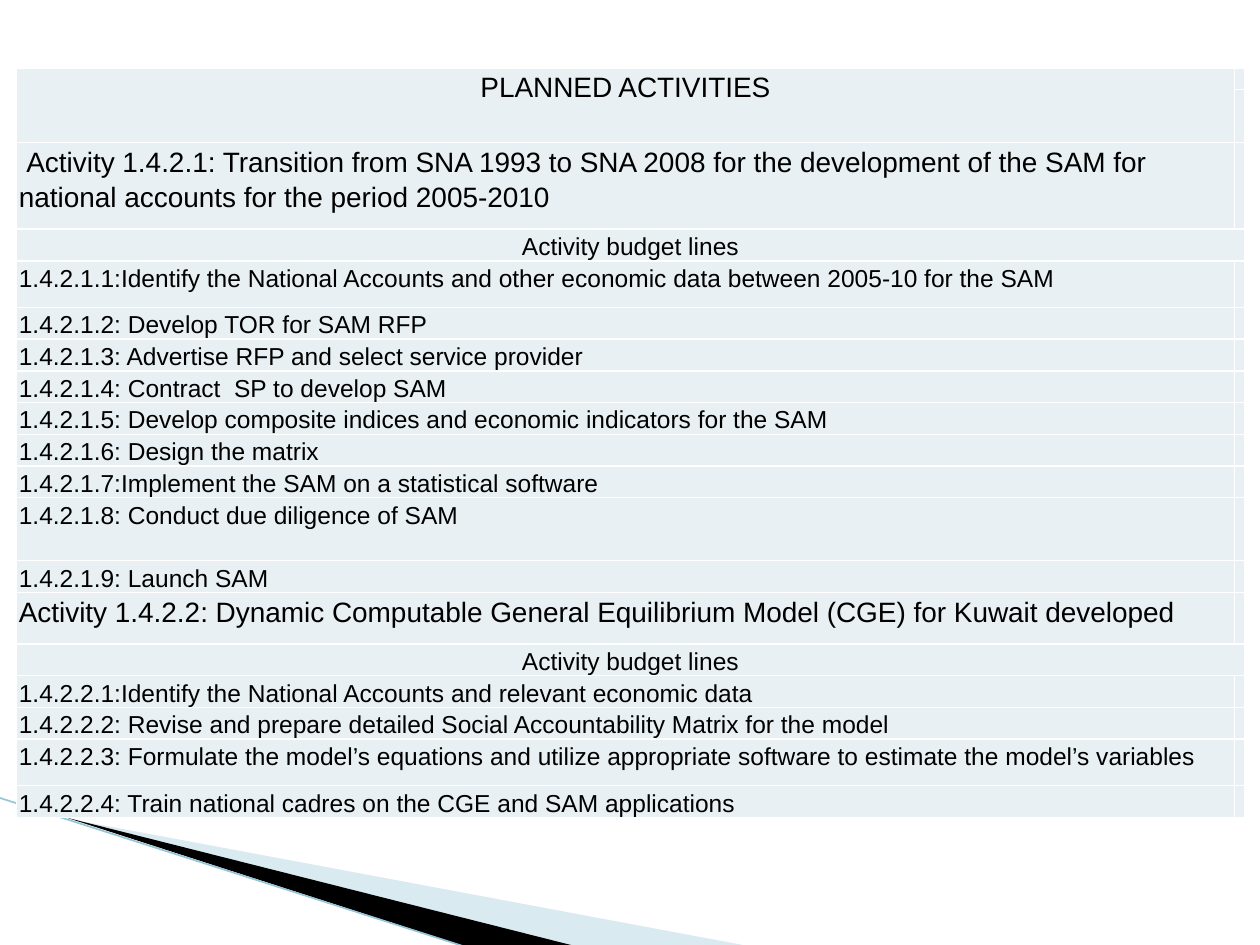
from lxml.etree import SubElement
from pptx import Presentation
from pptx.dml.color import RGBColor
from pptx.enum.shapes import MSO_CONNECTOR
from pptx.enum.text import PP_ALIGN
from pptx.oxml import parse_xml
from pptx.oxml.ns import nsdecls, qn
from pptx.util import Inches, Pt

WHITE = RGBColor(0xFF, 0xFF, 0xFF)
BLACK = RGBColor(0, 0, 0)
ROW_TINT = RGBColor(0xE8, 0xF0, 0xF4)
SWOOSH_BLUE = RGBColor(0xA0, 0xCB, 0xDC)
EDGE_BLUE = RGBColor(0x97, 0xC5, 0xD8)

FONT = "Arial"
LINE_ROW = 0.25
COLUMN_WIDTHS = (9.67, 0.07)
CELL_FORMAT = {"margin_left": Inches(0.02), "margin_right": Inches(0.02),
               "margin_top": 0, "margin_bottom": 0}

# kind of row: size in points, alignment, space after in points
ROW_KINDS = {
    "title": (16, PP_ALIGN.CENTER, 3),
    "activity": (16, PP_ALIGN.LEFT, 0),
    "heading": (14, PP_ALIGN.CENTER, 0),
    "line": (14, PP_ALIGN.LEFT, 0),
}

# kind, height in inches, text
ACTIVITIES = [
    ("title", 0.17, "PLANNED ACTIVITIES"),
    (None, 0.42, ""),
    ("activity", 0.69, "Activity 1.4.2.1: Transition from SNA 1993 to SNA 2008 for the "
                       "development of the SAM for national accounts for the period 2005-2010"),
    ("heading", LINE_ROW, "Activity budget lines"),
    ("line", 0.37, "1.4.2.1.1:Identify the National Accounts and other economic data "
                   "between 2005-10 for the SAM"),
    ("line", LINE_ROW, "1.4.2.1.2: Develop TOR for SAM RFP"),
    ("line", LINE_ROW, "1.4.2.1.3: Advertise RFP and select service provider"),
    ("line", LINE_ROW, "1.4.2.1.4: Contract  SP to develop SAM"),
    ("line", LINE_ROW, "1.4.2.1.5: Develop composite indices and economic indicators for the SAM"),
    ("line", LINE_ROW, "1.4.2.1.6: Design the matrix"),
    ("line", LINE_ROW, "1.4.2.1.7:Implement the SAM on a statistical software"),
    ("line", 2 * LINE_ROW, "1.4.2.1.8: Conduct due diligence of SAM"),
    ("line", LINE_ROW, "1.4.2.1.9: Launch SAM"),
    ("activity", 0.41, "Activity 1.4.2.2: Dynamic Computable General Equilibrium Model (CGE) "
                       "for Kuwait developed"),
    ("heading", LINE_ROW, "Activity budget lines"),
    ("line", LINE_ROW, "1.4.2.2.1:Identify the National Accounts and relevant economic data"),
    ("line", LINE_ROW, "1.4.2.2.2: Revise and prepare detailed Social Accountability Matrix "
                       "for the model"),
    ("line", 0.37, "1.4.2.2.3: Formulate the model’s equations and utilize appropriate "
                   "software to estimate the model’s variables"),
    ("line", LINE_ROW, "1.4.2.2.4: Train national cadres on the CGE and SAM applications"),
]
FIRST_ACTIVITY_ROW = 2


def add_wedge(slide, left, top, points, color, opacity):
    """Draw a filled outline whose points are offsets from left, top."""
    corners = [(Inches(left + x), Inches(top + y)) for x, y in points]
    builder = slide.shapes.build_freeform(*corners[0])
    builder.add_line_segments(corners[1:], close=True)
    wedge = builder.convert_to_shape()
    wedge.shadow.inherit = False
    wedge.fill.solid()
    wedge.fill.fore_color.rgb = color
    wedge.line.fill.background()
    if opacity < 100:
        tint = wedge.fill._xPr.find(qn("a:solidFill"))[0]
        SubElement(tint, qn("a:alpha"), val=str(opacity * 1000))


def add_swoosh(slide, left, top):
    add_wedge(slide, left, top, [(0.02, 0.01), (5.42, 1.02), (4.03, 1.02)], SWOOSH_BLUE, 40)
    add_wedge(slide, left, top, [(0, 0), (4.04, 1.02), (3.19, 1.03)], BLACK, 100)
    edge = slide.shapes.add_connector(
        MSO_CONNECTOR.STRAIGHT, Inches(left - 0.54), Inches(top - 0.16),
        Inches(left + 3.18), Inches(top + 1.03))
    edge.line.color.rgb = EDGE_BLUE
    edge.line.width = Pt(0.95)
    SubElement(edge._element.spPr, qn("a:effectLst"))


def format_cell(cell):
    for name, value in CELL_FORMAT.items():
        setattr(cell, name, value)
    cell.fill.solid()
    cell.fill.fore_color.rgb = ROW_TINT
    properties = cell._tc.get_or_add_tcPr()
    for position, side in enumerate(("lnL", "lnR", "lnT", "lnB")):
        properties.insert(position, parse_xml(
            f'<a:{side} {nsdecls("a")} w="{Pt(1)}"><a:solidFill>'
            f'<a:srgbClr val="{WHITE}"/></a:solidFill></a:{side}>'))
    # a small end mark lets empty cells stay as low as their row
    SubElement(cell.text_frame.paragraphs[0]._p, qn("a:endParaRPr"), sz="800")


def write_cell(cell, kind, text):
    size, alignment, space_after = ROW_KINDS[kind]
    paragraph = cell.text_frame.paragraphs[0]
    run = paragraph.add_run()
    run.text = text
    run.font.color.rgb = BLACK
    formats = {
        paragraph: {"alignment": alignment, "line_spacing": 1.15, "space_after": Pt(space_after)},
        run.font: {"name": FONT, "size": Pt(size)},
    }
    for target, values in formats.items():
        for name, value in values.items():
            setattr(target, name, value)


def add_activity_table(slide, left, top):
    heights = [height for _, height, _ in ACTIVITIES]
    table = slide.shapes.add_table(
        len(ACTIVITIES), len(COLUMN_WIDTHS), Inches(left), Inches(top),
        Inches(sum(COLUMN_WIDTHS)), Inches(sum(heights))).table
    table.first_row = table.horz_banding = False
    for column, width in zip(table.columns, COLUMN_WIDTHS):
        column.width = Inches(width)
    for index, (kind, height, text) in enumerate(ACTIVITIES):
        table.rows[index].height = Inches(height)
        for cell in table.rows[index].cells:
            format_cell(cell)
        if kind:
            write_cell(table.cell(index, 0), kind, text)
        if kind == "heading":
            table.cell(index, 0).merge(table.cell(index, 1))
    table.cell(0, 0).merge(table.cell(1, 0))
    opening = table.cell(FIRST_ACTIVITY_ROW, 0).text_frame.paragraphs[0]
    opening._p.get_or_add_pPr().set("indent", str(Inches(0.06)))


def main():
    deck = Presentation()
    deck.slide_width, deck.slide_height = Inches(10), Inches(7.5)
    slide = deck.slides.add_slide(deck.slide_layouts[6])
    slide.background.fill.solid()
    slide.background.fill.fore_color.rgb = WHITE
    add_swoosh(slide, 0.53, 6.49)
    add_activity_table(slide, 0.13, 0.54)
    deck.save("out.pptx")


if __name__ == "__main__":
    main()
